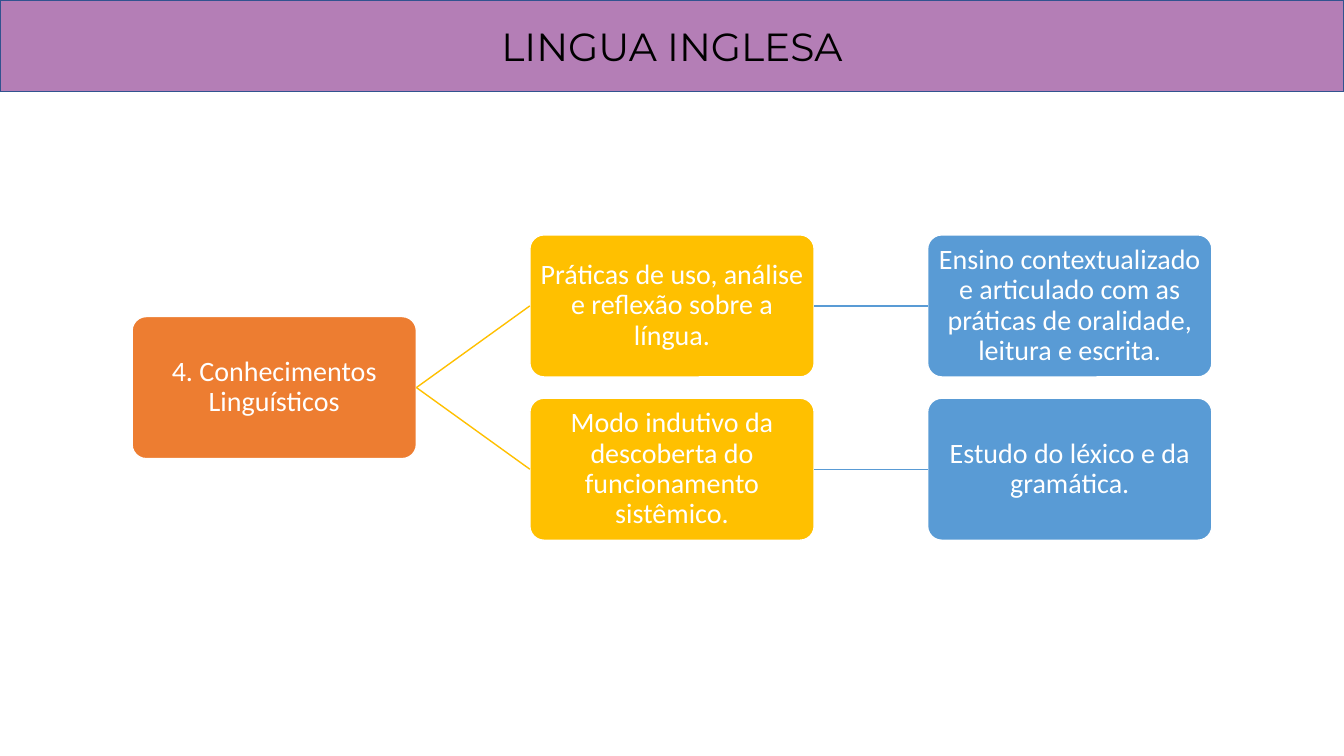
from lxml.etree import SubElement
from pptx import Presentation
from pptx.dml.color import RGBColor
from pptx.enum.shapes import MSO_CONNECTOR as CONN, MSO_SHAPE as SHAPE
from pptx.enum.text import MSO_ANCHOR as ANCHOR, PP_ALIGN as ALIGN
from pptx.oxml.ns import qn
from pptx.util import Inches, Pt

COLORS = {
    "banner": "B47EB6",
    "banner_line": "31538F",
    "root": "ED7D31",
    "practice": "FFC000",
    "content": "599BD5",
    "white": "FFFFFF",
    "black": "000000",
}
SLIDE_W, SLIDE_H = 13.33, 7.5
NODE_W, NODE_H = 2.82, 1.41

ROOT = "4. Conhecimentos Linguísticos"
BRANCHES = [
    ("Práticas de uso, análise e reflexão sobre a língua.",
     "Ensino contextualizado e articulado com as práticas de oralidade, leitura e escrita."),
    ("Modo indutivo da descoberta do funcionamento sistêmico.",
     "Estudo do léxico e da gramática."),
]


def rgb(name):
    return RGBColor.from_string(COLORS[name])


def add_box(s, kind, box, fill, line, text, font, size, color, inset=0.05):
    sp = s.shapes.add_shape(kind, *[Inches(v) for v in box])
    sp.shadow.inherit = False
    sp.fill.solid()
    sp.fill.fore_color.rgb = rgb(fill)
    sp.line.color.rgb = rgb(line)
    sp.line.width = Pt(1)
    tf = sp.text_frame
    tf.word_wrap = True
    tf.vertical_anchor = ANCHOR.MIDDLE
    tf.margin_left = tf.margin_right = Inches(inset)
    tf.margin_top = tf.margin_bottom = Inches(0.05)
    p = tf.paragraphs[0]
    p.alignment = ALIGN.CENTER
    r = p.add_run()
    r.text = text
    r.font.name = font
    r.font.size = Pt(size)
    r.font.color.rgb = rgb(color)
    return sp


def add_node(s, x, y, fill, text):
    sp = add_box(s, SHAPE.ROUNDED_RECTANGLE, (x, y, NODE_W, NODE_H),
                 fill, "white", text, "Calibri", 20, "white")
    sp.adjustments[0] = 0.1
    sp.text_frame.paragraphs[0].line_spacing = 0.9
    return sp


def add_link(s, start, end, color):
    """Join the right side of one node to the left side of the next."""
    link = s.shapes.add_connector(CONN.STRAIGHT, 0, 0, 0, 0)
    link.begin_connect(start, 3)
    link.end_connect(end, 1)
    link.line.color.rgb = rgb(color)
    link.line.width = Pt(1)
    SubElement(link._element.spPr, qn("a:effectLst"))


def add_banner(s, x, y, w, h):
    add_box(s, SHAPE.RECTANGLE, (x, y, w, h), "banner", "banner_line",
            "LINGUA INGLESA", "Montserrat", 28, "black", inset=0.1)


def add_tree(s, x, y, w, h):
    # Three columns spread over the width, rows over the height
    col_step = (w - NODE_W) / 2
    row_step = (h - NODE_H) / (len(BRANCHES) - 1)
    root = add_node(s, x, y + (h - NODE_H) / 2, "root", ROOT)
    for i, (practice_text, content_text) in enumerate(BRANCHES):
        top = y + i * row_step
        practice = add_node(s, x + col_step, top, "practice", practice_text)
        content = add_node(s, x + 2 * col_step, top, "content", content_text)
        add_link(s, root, practice, "practice")
        add_link(s, practice, content, "content")


def main():
    prs = Presentation()
    prs.slide_width, prs.slide_height = Inches(SLIDE_W), Inches(SLIDE_H)
    s = prs.slides.add_slide(prs.slide_layouts[6])
    add_banner(s, 0, 0, SLIDE_W, 0.91)
    add_tree(s, 1.31, 2.33, 10.71, 3.03)
    prs.save("out.pptx")


if __name__ == "__main__":
    main()
